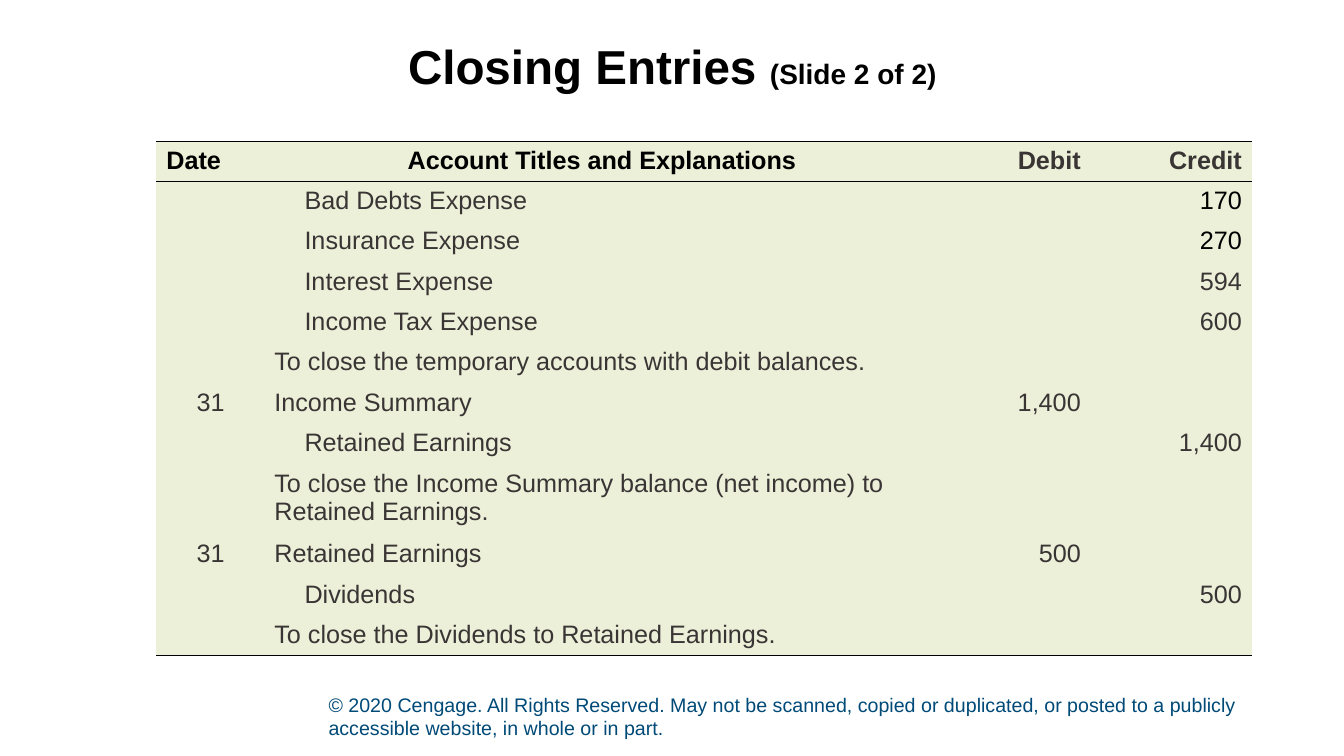
"""Build the closing entries journal slide."""
from dataclasses import dataclass
from typing import Optional

from lxml import etree
from pptx import Presentation, oxml, util as u
from pptx.dml import color
from pptx.enum import text
from pptx.oxml import ns


@dataclass(frozen=True)
class Theme:
    font: str = "Arial"
    black: str = "000000"
    ink: str = "393535"
    panel: str = "EDF0D8"
    notice: str = "004A78"
    title_size: int = 34
    part_size: int = 20
    body_size: int = 18
    notice_size: int = 14
    rule_width: float = 1
    no_grid_style: str = "{2D5ABB26-0587-4C30-8999-92F81FD0307C}"


@dataclass(frozen=True)
class Entry:
    account: str
    date: str = ""
    debit: str = ""
    credit: str = ""
    indented: bool = False
    credit_color: Optional[str] = None
    lines: int = 1


THEME = Theme()
INDENT = u.Cm(0.76)
LINE_HEIGHT = 0.71
CELL_PADDING = 0.25
COLUMN_WIDTHS = (2.72, 17.02, 3.81, 4.06)
HEADINGS = (
    ("Date", THEME.black, text.PP_ALIGN.LEFT),
    ("Account Titles and Explanations", THEME.black, text.PP_ALIGN.CENTER),
    ("Debit", THEME.ink, text.PP_ALIGN.RIGHT),
    ("Credit", THEME.ink, text.PP_ALIGN.RIGHT),
)
ENTRIES = (
    Entry("Bad Debts Expense", credit="170", indented=True, credit_color=THEME.black),
    Entry("Insurance Expense", credit="270", indented=True, credit_color=THEME.black),
    Entry("Interest Expense", credit="594", indented=True),
    Entry("Income Tax Expense", credit="600", indented=True),
    Entry("To close the temporary accounts with debit balances."),
    Entry("Income Summary", date="31", debit="1,400"),
    Entry("Retained Earnings", credit="1,400", indented=True),
    Entry("To close the Income Summary balance (net income) to Retained Earnings.", lines=2),
    Entry("Retained Earnings", date="31", debit="500"),
    Entry("Dividends", credit="500", indented=True),
    Entry("To close the Dividends to Retained Earnings."),
)


def add_run(paragraph, wording: str, size: int, ink: str, bold: bool = False) -> None:
    run = paragraph.add_run()
    run.text = wording
    run.font.name = THEME.font
    run.font.size = u.Pt(size)
    run.font.bold = bold
    run.font.color.rgb = color.RGBColor.from_string(ink)


def add_title(slide) -> None:
    title = slide.shapes.title
    title.left, title.top, title.width, title.height = u.Cm(2.34), u.Cm(0.38), u.Cm(29.21), u.Cm(2.54)
    title.text_frame.vertical_anchor = text.MSO_ANCHOR.MIDDLE
    heading = title.text_frame.paragraphs[0]
    heading.alignment = text.PP_ALIGN.CENTER
    add_run(heading, "Closing Entries ", THEME.title_size, THEME.black, True)
    add_run(heading, "(Slide 2 of 2)", THEME.part_size, THEME.black, True)


def set_borders(cell, ruled_sides: str) -> None:
    properties = cell._tc.get_or_add_tcPr()
    for side in "LRTB":
        rule = etree.SubElement(properties, ns.qn(f"a:ln{side}"))
        if side in ruled_sides:
            rule.set("w", str(u.Pt(THEME.rule_width)))
            ink = etree.SubElement(etree.SubElement(rule, ns.qn("a:solidFill")), ns.qn("a:srgbClr"))
            ink.set("val", THEME.black)
        else:
            etree.SubElement(rule, ns.qn("a:noFill"))


def fill_cell(cell, wording: str, ink: str, alignment: text.PP_ALIGN, ruled_sides: str,
              bold: bool = False, indented: bool = False) -> None:
    set_borders(cell, ruled_sides)
    cell.fill.solid()
    cell.fill.fore_color.rgb = color.RGBColor.from_string(THEME.panel)
    paragraph = cell.text_frame.paragraphs[0]
    paragraph.alignment = alignment
    if indented:
        paragraph._p.get_or_add_pPr().set("marL", str(INDENT))
    if wording:
        add_run(paragraph, wording, THEME.body_size, ink, bold)
    else:
        paragraph.font.size = u.Pt(THEME.body_size)


def add_journal(slide) -> None:
    line_counts = [1] + [entry.lines for entry in ENTRIES]
    heights = [u.Cm(lines * LINE_HEIGHT + CELL_PADDING) for lines in line_counts]
    widths = [u.Cm(width) for width in COLUMN_WIDTHS]
    journal = slide.shapes.add_table(
        len(heights), len(widths), u.Cm(3.94), u.Cm(3.56), sum(widths), sum(heights)).table
    journal.first_row = journal.horz_banding = False
    journal._tbl.tblPr.find(ns.qn("a:tableStyleId")).text = THEME.no_grid_style
    for column, width in zip(journal.columns, widths):
        column.width = width
    for row, height in zip(journal.rows, heights):
        row.height = height

    for column, (heading, ink, alignment) in enumerate(HEADINGS):
        fill_cell(journal.cell(0, column), heading, ink, alignment, "TB", bold=True)
    left, right = text.PP_ALIGN.LEFT, text.PP_ALIGN.RIGHT
    for row, entry in enumerate(ENTRIES, start=1):
        ruled_sides = "T" if row == 1 else "B" if row == len(ENTRIES) else ""
        date, account, debit, credit = journal.rows[row].cells
        fill_cell(date, entry.date, THEME.ink, left, ruled_sides, indented=True)
        fill_cell(account, entry.account, THEME.ink, left, ruled_sides, indented=entry.indented)
        fill_cell(debit, entry.debit, THEME.ink, right, ruled_sides)
        fill_cell(credit, entry.credit, entry.credit_color or THEME.ink, right, ruled_sides)


def add_copyright(slide) -> None:
    notice = slide.shapes.add_textbox(u.Cm(8.03), u.Cm(17.5), u.Cm(24.46), u.Cm(1.27)).text_frame
    notice.word_wrap = True
    notice.vertical_anchor = text.MSO_ANCHOR.BOTTOM
    add_run(notice.paragraphs[0],
            "© 2020 Cengage. All Rights Reserved. May not be scanned, copied or duplicated, "
            "or posted to a publicly accessible website, in whole or in part.",
            THEME.notice_size, THEME.notice)


def main() -> None:
    deck = Presentation()
    deck.slide_width, deck.slide_height = u.Cm(33.87), u.Cm(19.05)
    slide = deck.slides.add_slide(deck.slide_layouts[5])
    add_copyright(slide)
    add_title(slide)
    add_journal(slide)
    deck.save("out.pptx")


if __name__ == "__main__":
    main()
